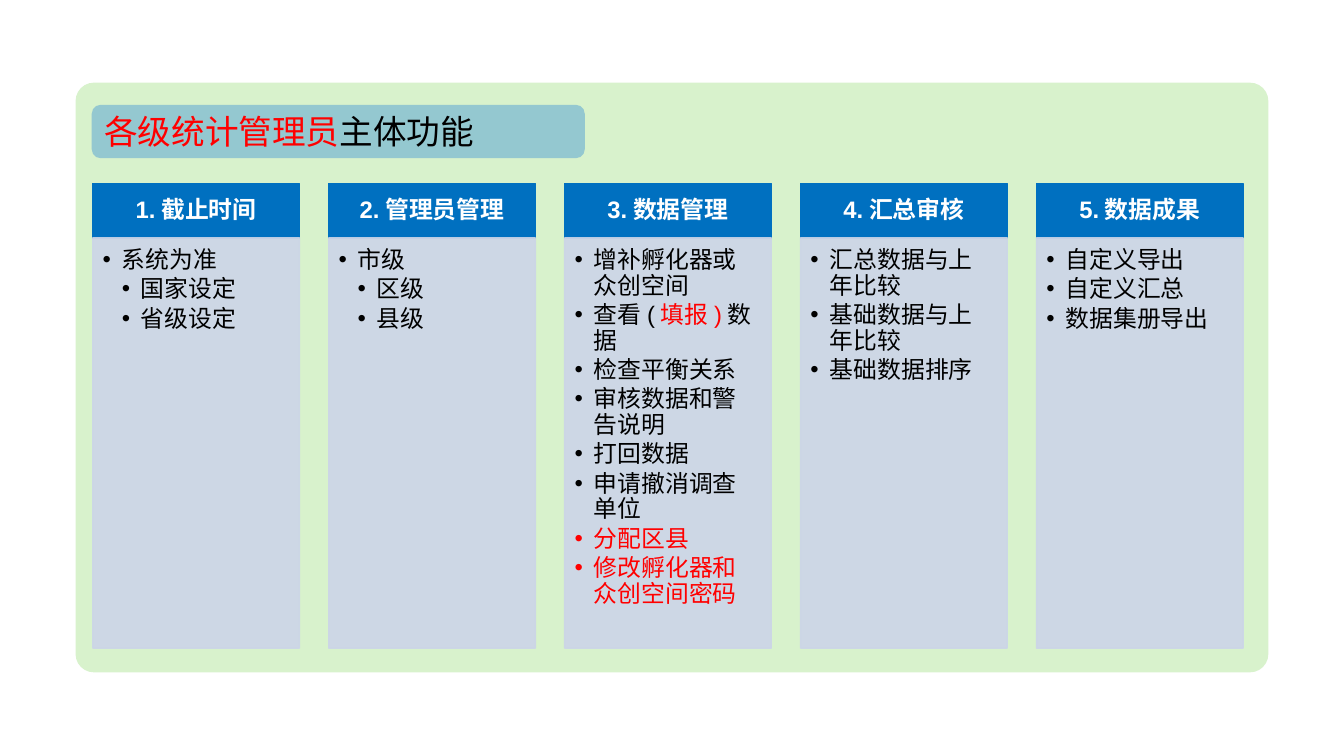
from pptx import Presentation
from pptx import util as u
from pptx.dml.color import RGBColor
from pptx.enum import shapes, text
from pptx.oxml.ns import qn
from lxml import etree

RED, BLACK, WHITE = "FF0000", "000000", "FFFFFF"
BLUE, PALE, GREEN, TEAL = "0070C0", "CCD5E8", "3EC000", "2F89D7"

title = [("各级统计管理员", RED), ("主体功能", BLACK)]
cols = [
    ("1.截止时间", [
        (1, [("系统为准", BLACK)]),
        (2, [("国家设定", BLACK)]),
        (2, [("省级设定", BLACK)]),
    ]),
    ("2.管理员管理", [
        (1, [("市级", BLACK)]),
        (2, [("区级", BLACK)]),
        (2, [("县级", BLACK)]),
    ]),
    ("3.数据管理", [
        (1, [("增补孵化器或众创空间", BLACK)]),
        (1, [("查看(", BLACK), ("填报)", RED), ("数据", BLACK)]),
        (1, [("检查平衡关系", BLACK)]),
        (1, [("审核数据和警告说明", BLACK)]),
        (1, [("打回数据", BLACK)]),
        (1, [("申请撤消调查单位", BLACK)]),
        (1, [("分配区县", RED)]),
        (1, [("修改孵化器和众创空间密码", RED)]),
    ]),
    ("4.汇总审核", [
        (1, [("汇总数据与上年比较", BLACK)]),
        (1, [("基础数据与上年比较", BLACK)]),
        (1, [("基础数据排序", BLACK)]),
    ]),
    ("5.数据成果", [
        (1, [("自定义导出", BLACK)]),
        (1, [("自定义汇总", BLACK)]),
        (1, [("数据集册导出", BLACK)]),
    ]),
]

LEFT, STEP, WIDE = 0.92, 2.34, 2.05
TOP, HEAD, BODY = 1.82, 0.54, 4.07
INDENT = 0.19


def paint(fill, color, alpha=100):
    fill.solid()
    fill.fore_color.rgb = RGBColor.from_string(color)
    if alpha < 100:
        tag = fill._xPr.find(qn("a:solidFill"))[0]
        etree.SubElement(tag, qn("a:alpha"), val=str(alpha * 1000))


def box(kind, x, y, w, h, color, alpha=100, edge=False):
    shape = slide.shapes.add_shape(kind, *map(u.Inches, (x, y, w, h)))
    shape.shadow.inherit = False
    paint(shape.fill, color, alpha)
    if edge:
        shape.line.width = u.Pt(1)
        paint(shape.line.fill, color, alpha)
    else:
        shape.line.fill.background()
    return shape


def frame(shape, sides, anchor):
    body = shape.text_frame
    body.word_wrap = True
    body.vertical_anchor = anchor
    (body.margin_left, body.margin_top,
     body.margin_right, body.margin_bottom) = map(u.Inches, sides)
    return body


def write(para, runs, size, bold=False, align=text.PP_ALIGN.LEFT):
    para.alignment = align
    for words, color in runs:
        run = para.add_run()
        run.text = words
        run.font.name = "Arial"
        run.font.size = u.Pt(size)
        run.font.bold = bold
        paint(run.font.fill, color)


def bullet(para, level):
    para.level = level
    para.line_spacing = 0.9
    para.space_after = u.Pt(2.55)
    props = para._p.get_or_add_pPr()
    props.set("marL", str(u.Inches(INDENT * level)))
    props.set("indent", str(-u.Inches(INDENT)))
    etree.SubElement(props, qn("a:buFont"), typeface="Arial")
    etree.SubElement(props, qn("a:buChar"), char="•")


deck = Presentation()
deck.slide_width, deck.slide_height = u.Inches(13.33), u.Inches(7.5)
slide = deck.slides.add_slide(deck.slide_layouts[6])
RECT = shapes.MSO_SHAPE.RECTANGLE
ROUND = shapes.MSO_SHAPE.ROUNDED_RECTANGLE
MIDDLE, UPPER = text.MSO_ANCHOR.MIDDLE, text.MSO_ANCHOR.TOP

panel = box(ROUND, 0.75, 0.82, 11.83, 5.85, GREEN, 20)
panel.adjustments[0] = 0.031
banner = box(ROUND, 0.91, 1.04, 4.89, 0.53, TEAL, 40)
write(frame(banner, (0.1, 0.05, 0.1, 0.05), MIDDLE).paragraphs[0], title, 24)

for i, (name, items) in enumerate(cols):
    x = LEFT + i * STEP
    head = box(RECT, x, TOP, WIDE, HEAD, BLUE, edge=True)
    para = frame(head, (0.13, 0.08, 0.13, 0.08), MIDDLE).paragraphs[0]
    para.line_spacing = 0.9
    write(para, [(name, WHITE)], 17, True, text.PP_ALIGN.CENTER)
    card = box(RECT, x, TOP + HEAD, WIDE, BODY, PALE, 90, True)
    body = frame(card, (0.1, 0.1, 0.13, 0.15), UPPER)
    for j, (level, runs) in enumerate(items):
        para = body.add_paragraph() if j else body.paragraphs[0]
        bullet(para, level)
        write(para, runs, 17)

deck.save("out.pptx")
